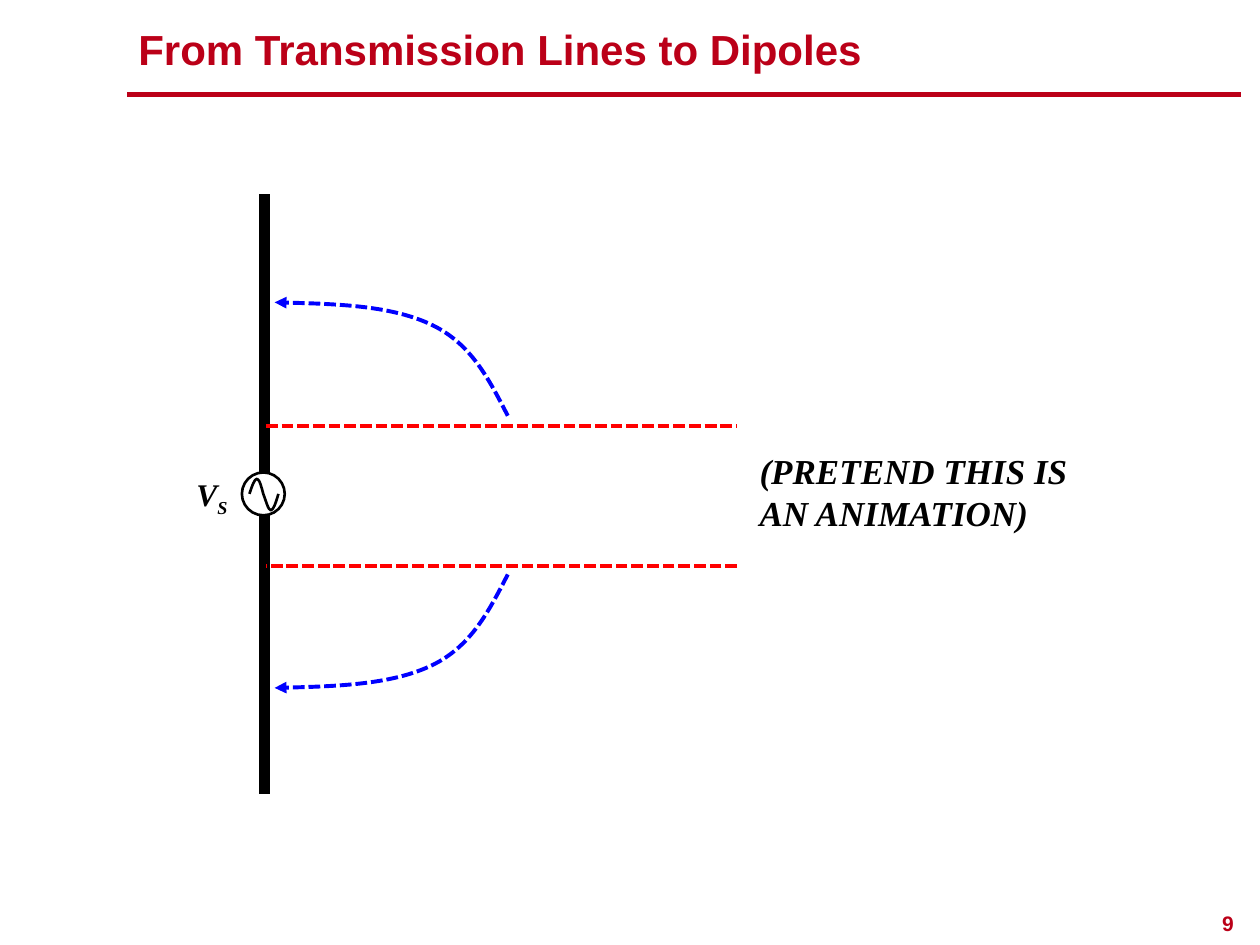
from lxml import etree
from pptx import Presentation
from pptx.dml.color import RGBColor
from pptx.enum.dml import MSO_LINE
from pptx.enum.shapes import MSO_CONNECTOR, MSO_SHAPE
from pptx.enum.text import MSO_ANCHOR, PP_ALIGN
from pptx.oxml.ns import qn
from pptx.util import Inches, Pt

CRIMSON = RGBColor(0xBB, 0x00, 0x18)
BLACK = RGBColor(0x00, 0x00, 0x00)
WHITE = RGBColor(0xFF, 0xFF, 0xFF)
RED = RGBColor(0xFF, 0x00, 0x00)
BLUE = RGBColor(0x00, 0x00, 0xFF)

STRAIGHT = MSO_CONNECTOR.STRAIGHT
OVAL = MSO_SHAPE.OVAL
DASHED = MSO_LINE.SQUARE_DOT
TOP, MIDDLE = MSO_ANCHOR.TOP, MSO_ANCHOR.MIDDLE
LEFT, RIGHT = PP_ALIGN.LEFT, PP_ALIGN.RIGHT

HEADING = {"name": "Arial", "bold": True}
MATH = {"name": "Times New Roman", "bold": True, "italic": True}


class SlideBuilder:
    def __init__(self, slide):
        self.shapes = slide.shapes

    def _stroke(self, shape, color, width, dash=None, arrow=False):
        line = shape.line
        line.color.rgb = color
        line.width = Pt(width)
        if dash is not None:
            line.dash_style = dash
        if arrow:
            ln = shape._element.spPr.find(qn("a:ln"))
            etree.SubElement(ln, qn("a:tailEnd"), type="triangle")

    def text(self, box, runs, style, size, color, align=LEFT, anchor=TOP,
             wrap=True, spacing=1.0):
        """Each run is a (text, baseline shift in percent) pair."""
        frame = self.shapes.add_textbox(*map(Inches, box)).text_frame
        frame.word_wrap = wrap
        frame.vertical_anchor = anchor
        paragraph = frame.paragraphs[0]
        paragraph.alignment = align
        paragraph.line_spacing = spacing
        for words, baseline in runs:
            run = paragraph.add_run()
            run.text = words
            for attribute, value in {**style, "size": Pt(size)}.items():
                setattr(run.font, attribute, value)
            run.font.color.rgb = color
            if baseline:
                run._r.get_or_add_rPr().set("baseline", str(baseline * 1000))

    def line(self, start, end, color, width, dash=None):
        connector = self.shapes.add_connector(STRAIGHT, *map(Inches, start + end))
        self._stroke(connector, color, width, dash)
        etree.SubElement(connector._element.spPr, qn("a:effectLst"))

    def circle(self, center, diameter, fill, color, width):
        corner = [Inches(c - diameter / 2) for c in center]
        circle = self.shapes.add_shape(OVAL, *corner, Inches(diameter), Inches(diameter))
        circle.shadow.inherit = False
        circle.fill.solid()
        circle.fill.fore_color.rgb = fill
        self._stroke(circle, color, width)
        return circle

    def curve(self, points, color, width, dash=None, arrow=False):
        """Bezier path: a start point, then three points for each segment."""
        start, *rest = [(Inches(x), Inches(y)) for x, y in points]
        builder = self.shapes.build_freeform(*start)
        builder.add_line_segments(rest, close=False)
        curve = builder.convert_to_shape()
        # Turn every three straight steps into one cubic segment
        steps = list(curve._element.iter(qn("a:lnTo")))
        for i in range(0, len(steps), 3):
            cubic = etree.Element(qn("a:cubicBezTo"))
            steps[i].addprevious(cubic)
            for step in steps[i:i + 3]:
                cubic.append(step[0])
                step.getparent().remove(step)
        curve.shadow.inherit = False
        curve.fill.background()
        self._stroke(curve, color, width, dash, arrow)
        return curve

    def group(self, *members):
        self.shapes.add_group_shape(members)


def main():
    deck = Presentation()
    deck.slide_width, deck.slide_height = Inches(10), Inches(7.5)
    page = SlideBuilder(deck.slides.add_slide(deck.slide_layouts[6]))

    # Heading, rule and page number
    page.text((9.48, 7.2, 0.41, 0.28), [("9", 0)], HEADING, 12, CRIMSON,
              align=RIGHT, wrap=False, spacing=0.9)
    page.line((1.01, 0.75), (9.85, 0.75), CRIMSON, 3)
    page.text((1, 0.17, 8.53, 0.44), [("From Transmission Lines to Dipoles", 0)],
              HEADING, 24, CRIMSON, anchor=MIDDLE)

    # Dipole and the two former transmission line conductors
    dipole_x, feed_x = 2.1, 5.85
    page.line((dipole_x, 1.54), (dipole_x, 6.3), BLACK, 6)
    page.line((2.11, 3.38), (feed_x, 3.38), RED, 2.25, DASHED)
    page.line((feed_x, 4.49), (2.11, 4.49), RED, 2.25, DASHED)

    # Voltage source with its sine wave
    source = page.circle((2.09, 3.92), 0.34, WHITE, BLACK, 1.5)
    sine = page.curve([(1.98, 3.92), (2, 3.86), (2.02, 3.8), (2.04, 3.8),
                       (2.06, 3.8), (2.08, 3.88), (2.09, 3.92),
                       (2.11, 3.97), (2.13, 4.05), (2.15, 4.05),
                       (2.17, 4.05), (2.19, 3.99), (2.21, 3.92)], BLACK, 1.5)
    page.group(source, sine)
    page.text((1.46, 3.72, 0.46, 0.4), [("V", 0), ("S", -25)], MATH, 18, BLACK,
              wrap=False)

    # Arrows folding the conductors outward, mirrored about the axis
    axis_y = 3.93
    fold = [(4.03, 0.63), (3.88, 0.92), (3.74, 1.2), (3.43, 1.35),
            (3.12, 1.5), (2.65, 1.52), (2.18, 1.53)]
    for side in (-1, 1):
        page.curve([(x, axis_y + side * offset) for x, offset in fold],
                   BLUE, 2.25, DASHED, arrow=True)

    # Remark
    page.text((5.93, 3.52, 2.79, 0.77), [("(PRETEND THIS IS AN ANIMATION)", 0)],
              MATH, 20, BLACK)

    deck.save("out.pptx")


if __name__ == "__main__":
    main()
